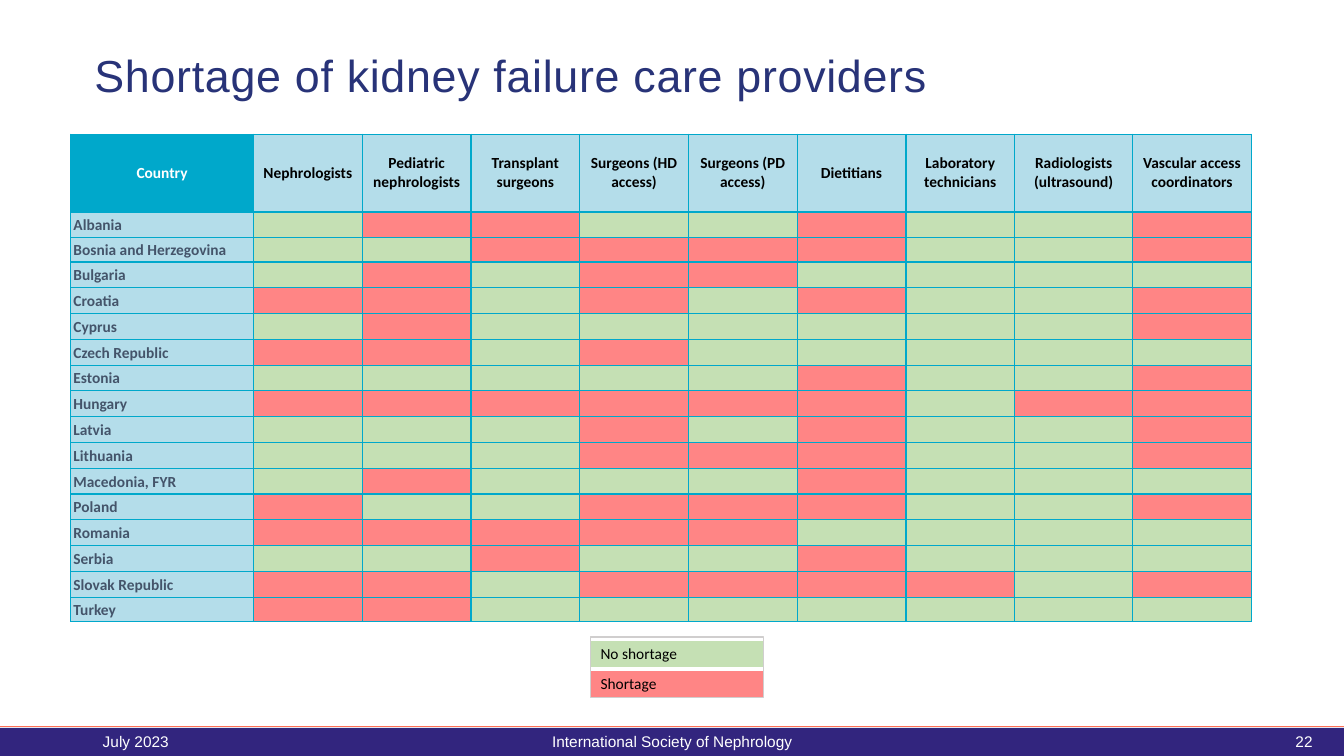
import pptx
import pptx.util
import pptx.dml.color
import pptx.enum.shapes
import pptx.enum.text
import pptx.oxml.ns
from lxml import etree
from pptx.util import Cm, Pt

RGBColor = pptx.dml.color.RGBColor
ALIGN = pptx.enum.text.PP_ALIGN
MIDDLE = pptx.enum.text.MSO_ANCHOR.MIDDLE
RECTANGLE = pptx.enum.shapes.MSO_SHAPE.RECTANGLE
qn = pptx.oxml.ns.qn

WHITE = RGBColor(0xFF, 0xFF, 0xFF)
BLACK = RGBColor(0x00, 0x00, 0x00)
NAVY = RGBColor(0x28, 0x33, 0x78)
INDIGO = RGBColor(0x32, 0x25, 0x7E)
CORAL = RGBColor(0xFE, 0x70, 0x55)
TEAL = RGBColor(0x00, 0xA8, 0xCB)
PALE_BLUE = RGBColor(0xB4, 0xDD, 0xEA)
SLATE = RGBColor(0x44, 0x54, 0x6A)
GREY = RGBColor(0xD0, 0xCE, 0xCE)
GREEN = RGBColor(0xC5, 0xE0, 0xB4)
RED = RGBColor(0xFF, 0x85, 0x85)

PROVIDERS = [
    "Nephrologists", "Pediatric nephrologists", "Transplant surgeons",
    "Surgeons (HD access)", "Surgeons (PD access)", "Dietitians",
    "Laboratory technicians", "Radiologists (ultrasound)",
    "Vascular access coordinators",
]
# One mark per provider: X is a shortage
SHORTAGES = {
    "Albania": ".XX..X..X",
    "Bosnia and Herzegovina": "..XXXX..X",
    "Bulgaria": ".X.XX....",
    "Croatia": "XX.X.X..X",
    "Cyprus": ".X......X",
    "Czech Republic": "XX.X.....",
    "Estonia": ".....X..X",
    "Hungary": "XXXXXX.XX",
    "Latvia": "...X.X..X",
    "Lithuania": "...XXX..X",
    "Macedonia, FYR": ".X...X...",
    "Poland": "X..XXX..X",
    "Romania": "XXXXX....",
    "Serbia": "..X..X...",
    "Slovak Republic": "XX.XXXX.X",
    "Turkey": "XX.......",
}


def write(frame, text, size, font_name, color, bold=False, **paragraph_format):
    """Put one formatted run in a text frame and return the run."""
    paragraph = frame.paragraphs[0]
    for key, value in paragraph_format.items():
        setattr(paragraph, key, value)
    run = paragraph.add_run()
    run.text = text
    font = {"size": Pt(size), "name": font_name, "bold": bold}
    for key, value in font.items():
        setattr(run.font, key, value)
    run.font.color.rgb = color
    return run


def paint(cell, fill, border, widths):
    """Give a cell its fill and its left, right, top and bottom borders."""
    properties = cell._tc.get_or_add_tcPr()
    for side, width in zip(("lnL", "lnR", "lnT", "lnB"), widths):
        line = etree.SubElement(properties, qn("a:" + side), w=str(Pt(width)))
        solid = etree.SubElement(line, qn("a:solidFill"))
        etree.SubElement(solid, qn("a:srgbClr"), val=str(border))
    cell.fill.solid()
    cell.fill.fore_color.rgb = fill


deck = pptx.Presentation()
deck.slide_width, deck.slide_height = Cm(33.87), Cm(19.05)
slide = deck.slides.add_slide(deck.slide_layouts[6])
shapes = slide.shapes

# Footer band
band = shapes.add_shape(RECTANGLE, 0, Cm(18.34), deck.slide_width, Cm(0.71))
band.shadow.inherit = False
band.fill.solid()
band.fill.fore_color.rgb = INDIGO
band.line.fill.background()
rule = shapes.add_connector(pptx.enum.shapes.MSO_CONNECTOR.STRAIGHT,
                            0, Cm(18.31), deck.slide_width, Cm(18.31))
rule.line.color.rgb = CORAL
rule.line.width = Pt(0.75)
etree.SubElement(rule._element.spPr, qn("a:effectLst"))

# Shortage table
column_widths = [4.61] + [2.74] * 7 + [2.98] * 2
row_heights = [1.96, 0.65, 0.61] + [0.65] * 13 + [0.61]
matrix = shapes.add_table(len(row_heights), len(column_widths), Cm(1.78), Cm(3.38),
                          Cm(sum(column_widths)), Cm(sum(row_heights))).table
matrix.first_row = matrix.horz_banding = False
for column, width in zip(matrix.columns, column_widths):
    column.width = Cm(width)
for row, height in zip(matrix.rows, row_heights):
    row.height = Cm(height)

for cell in matrix.iter_cells():
    margins = {"margin_left": Cm(0.07), "margin_right": Cm(0.07), "margin_top": 0,
               "margin_bottom": 0, "vertical_anchor": MIDDLE}
    for key, value in margins.items():
        setattr(cell, key, value)

for index, heading in enumerate(["Country"] + PROVIDERS):
    cell = matrix.cell(0, index)
    if index:
        cell.margin_left = cell.margin_right = Cm(0.03)
    paint(cell, PALE_BLUE if index else TEAL, TEAL, [1] * 4)
    write(cell.text_frame, heading, 11, "Calibri", BLACK if index else WHITE,
          bold=True, alignment=ALIGN.CENTER)

for row_index, (country, marks) in enumerate(SHORTAGES.items(), 1):
    cell = matrix.cell(row_index, 0)
    paint(cell, PALE_BLUE, TEAL, [1] * 4)
    write(cell.text_frame, country, 11, "Calibri", SLATE, bold=True, line_spacing=1.07)
    for column_index, mark in enumerate(marks, 1):
        cell = matrix.cell(row_index, column_index)
        paint(cell, RED if mark == "X" else GREEN, TEAL, [1] * 4)
        # A small end mark keeps the empty cell from stretching its row
        cell.text_frame.paragraphs[0]._p.get_or_add_endParaRPr().set("sz", "800")

# Legend
legend = shapes.add_table(2, 1, Cm(14.88), Cm(16.13), Cm(4.37), Cm(1.46)).table
legend.first_row = legend.horz_banding = False
legend_rows = [("No shortage", GREEN, [1, 1, 1, 3]), ("Shortage", RED, [1, 1, 3, 1])]
for index, (label, color, widths) in enumerate(legend_rows):
    cell = legend.cell(index, 0)
    paint(cell, color, WHITE, widths)
    write(cell.text_frame, label, 11, "Calibri", BLACK)
legend_frame = shapes.add_shape(RECTANGLE, Cm(14.88), Cm(16.05), Cm(4.37), Cm(1.53))
legend_frame.shadow.inherit = False
legend_frame.fill.background()
legend_frame.line.color.rgb = GREY
legend_frame.line.width = Pt(1)

# Title and footer texts
captions = [
    ("Shortage of kidney failure care providers", 2.13, 0.99, 23.52, 1.8, 32, NAVY, ALIGN.LEFT),
    ("July 2023", 2.34, 18.16, 7.62, 1.02, 11, WHITE, ALIGN.LEFT),
    ("International Society of Nephrology", 11.23, 18.16, 11.43, 1.02, 11, WHITE, ALIGN.CENTER),
    ("22", 23.93, 18.16, 9.4, 1.02, 11, WHITE, ALIGN.RIGHT),
]
for text, left, top, width, height, size, color, alignment in captions:
    frame = shapes.add_textbox(Cm(left), Cm(top), Cm(width), Cm(height)).text_frame
    frame.word_wrap = True
    frame.vertical_anchor = MIDDLE
    run = write(frame, text, size, "Arial", color, alignment=alignment)
    if color == NAVY:
        run.font._element.set("spc", "50")

deck.save("out.pptx")
